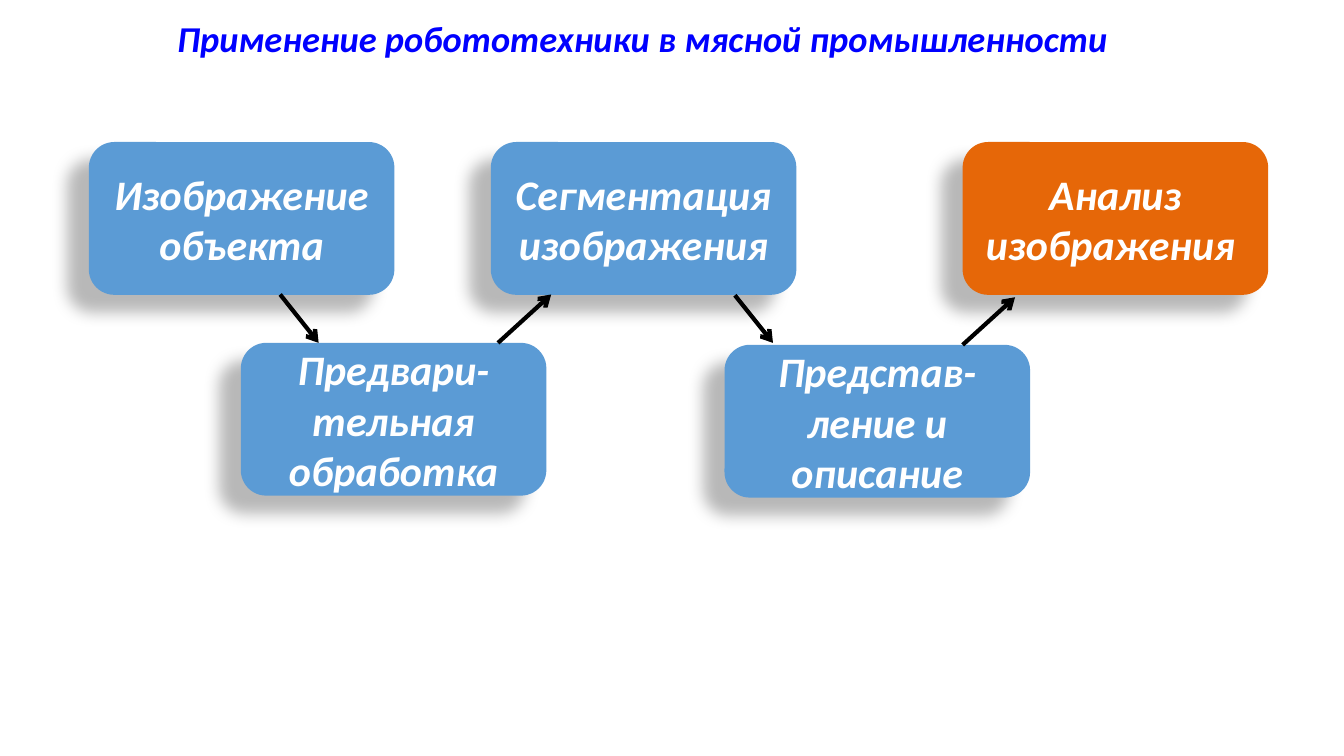
"""Builds a slide with the image-processing stages of robotics in the meat industry."""
from dataclasses import dataclass

import pptx
import pptx.dml.color
import pptx.enum.shapes
import pptx.enum.text
import pptx.oxml
import pptx.oxml.ns
import pptx.util

Cm = pptx.util.Cm
Pt = pptx.util.Pt
RGB = pptx.dml.color.RGBColor.from_string
TextAnchor = pptx.enum.text.MSO_ANCHOR


@dataclass(frozen=True)
class Theme:
    font: str = "Calibri"
    heading: str = "0000FF"
    stage: str = "5B9BD5"
    result: str = "E66708"
    stage_text: str = "FFFFFF"
    ink: str = "000000"
    heading_size: int = 26
    stage_size: int = 30
    arrow_width: int = 3


theme = Theme()


def set_text(frame, words, size, color, anchor):
    frame.text = words
    frame.vertical_anchor = anchor
    paragraph = frame.paragraphs[0]
    paragraph.alignment = pptx.enum.text.PP_ALIGN.CENTER
    paragraph.font.name = theme.font
    paragraph.font.size = Pt(size)
    paragraph.font.bold = True
    paragraph.font.italic = True
    paragraph.font.color.rgb = RGB(color)


def add_xml(parent, xml):
    parent.append(pptx.oxml.parse_xml(xml))


presentation = pptx.Presentation()
presentation.slide_width = Cm(33.87)
presentation.slide_height = Cm(19.05)
slide = presentation.slides.add_slide(presentation.slide_layouts[5])
namespace = pptx.oxml.ns.nsdecls("a")

heading = slide.shapes.title
heading.left, heading.top, heading.width, heading.height = Cm(4.19), Cm(0.28), Cm(24.03), Cm(1.37)
set_text(heading.text_frame, "Применение робототехники в мясной промышленности",
         theme.heading_size, theme.heading, TextAnchor.TOP)
heading.text_frame.word_wrap = False
heading.text_frame.auto_size = pptx.enum.text.MSO_AUTO_SIZE.NONE

stages = [
    ("Изображение объекта", 2.24, 3.58, theme.stage),
    ("Предвари-тельная обработка", 6.07, 8.64, theme.stage),
    ("Сегментация изображения", 12.37, 3.58, theme.stage),
    ("Представ-ление и описание", 18.26, 8.69, theme.stage),
    ("Анализ изображения ", 24.26, 3.58, theme.result),
]
for words, left, top, color in stages:
    stage = slide.shapes.add_shape(pptx.enum.shapes.MSO_SHAPE.ROUNDED_RECTANGLE,
                                   Cm(left), Cm(top), Cm(7.7), Cm(3.85))
    stage.fill.solid()
    stage.fill.fore_color.rgb = RGB(color)
    stage.line.fill.background()
    stage.shadow.inherit = False
    add_xml(stage.element.spPr.find(pptx.oxml.ns.qn("a:effectLst")),
            f'<a:outerShdw {namespace} blurRad="{Pt(11.8)}" dist="{Pt(19.7)}" dir="{141 * 60000}" '
            f'algn="ctr" rotWithShape="0"><a:srgbClr val="{theme.ink}">'
            '<a:alpha val="28000"/></a:srgbClr></a:outerShdw>')
    set_text(stage.text_frame, words, theme.stage_size, theme.stage_text, TextAnchor.MIDDLE)

steps = [
    (7.06, 7.42, 8.03, 8.64),
    (12.55, 8.64, 13.89, 7.42),
    (18.52, 7.44, 19.48, 8.64),
    (24.26, 8.69, 25.58, 7.49),
]
for ends in steps:
    step = slide.shapes.add_connector(pptx.enum.shapes.MSO_CONNECTOR.STRAIGHT, *map(Cm, ends))
    step.line.color.rgb = RGB(theme.ink)
    step.line.width = Pt(theme.arrow_width)
    add_xml(step.line._get_or_add_ln(), f'<a:tailEnd {namespace} type="arrow"/>')
    add_xml(step.element.spPr, f"<a:effectLst {namespace}/>")

presentation.save("out.pptx")
